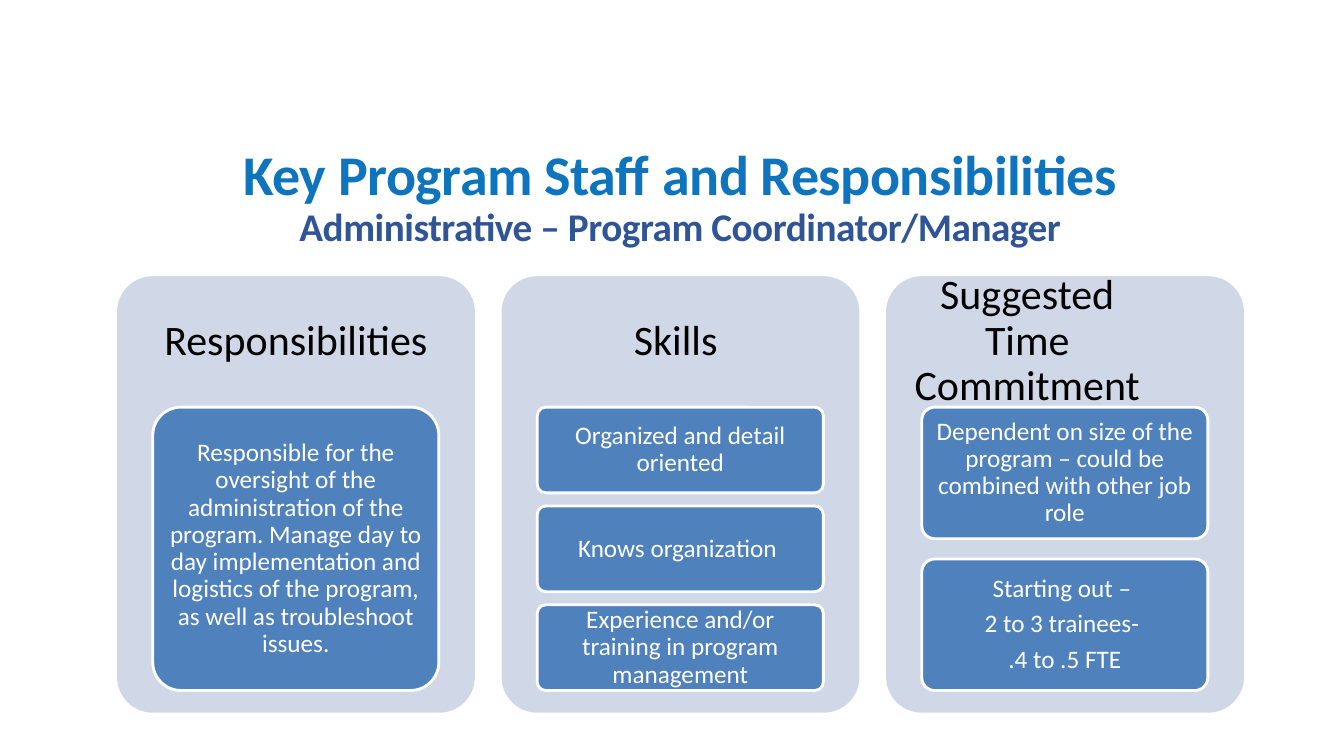
"""Build the slide on the program coordinator's responsibilities, skills and time."""
from dataclasses import dataclass

from pptx import Presentation
from pptx.dml.color import RGBColor
from pptx.enum.shapes import MSO_SHAPE
from pptx.enum.text import MSO_ANCHOR, PP_ALIGN
from pptx.shapes.autoshape import Shape
from pptx.slide import Slide
from pptx.text.text import TextFrame, _Paragraph
from pptx.util import Cm, Length, Pt

FONT = "Calibri"
PANEL_LEFT, PANEL_TOP, PANEL_PITCH = 2.95, 6.96, 9.69
PANEL_WIDTH, PANEL_HEIGHT = 9.02, 11.0
HEADING_INDENT, HEADING_HEIGHT = 0.1, 3.1
CARD_INDENT, CARD_WIDTH = 0.9, 7.21
CARDS_TOP, CARDS_HEIGHT = 10.26, 7.14
GAP_RATIO = 2 / 13


@dataclass(frozen=True)
class Panel:
    heading: list[str]
    cards: list[list[str]]
    first_line_right_margin: float = 0


PANELS = [
    Panel(["Responsibilities"], [[
        "Responsible for the oversight of the administration of the program. "
        "Manage day to day implementation and logistics of the program, "
        "as well as troubleshoot issues."]]),
    Panel(["Skills "], [
        ["Organized and detail oriented"],
        ["Knows organization "],
        ["Experience and/or training in program management"]]),
    Panel(["Suggested", "Time Commitment"], [
        ["Dependent on size of the program – could be combined with other job role"],
        ["Starting out – ", "2 to 3 trainees- ", ".4 to .5 FTE"]],
        first_line_right_margin=1.9),
]


def color(hex_code: str) -> RGBColor:
    return RGBColor.from_string(hex_code)


def style(paragraph: _Paragraph) -> None:
    paragraph.alignment = PP_ALIGN.CENTER
    paragraph.line_spacing = 0.9
    paragraph.font.name = FONT


def write(frame: TextFrame, lines: list[str], size: int, hex_code: str,
          side: float, edge: float, gap: Length) -> None:
    frame.word_wrap = True
    frame.vertical_anchor = MSO_ANCHOR.MIDDLE
    frame.margin_left = frame.margin_right = Cm(side)
    frame.margin_top = frame.margin_bottom = Cm(edge)
    for index, line in enumerate(lines):
        paragraph = frame.add_paragraph() if index else frame.paragraphs[0]
        paragraph.text = line
        style(paragraph)
        paragraph.font.size = Pt(size)
        paragraph.font.color.rgb = color(hex_code)
        if index:
            paragraph.space_before = gap


def add_rounded(slide: Slide, left: float, top: float, width: float,
                height: float, fill: str) -> Shape:
    rounded = slide.shapes.add_shape(
        MSO_SHAPE.ROUNDED_RECTANGLE, Cm(left), Cm(top), Cm(width), Cm(height))
    rounded.adjustments[0] = 0.1
    rounded.shadow.inherit = False
    rounded.fill.solid()
    rounded.fill.fore_color.rgb = color(fill)
    rounded.line.fill.background()
    return rounded


def add_panel(slide: Slide, panel: Panel, left: float) -> None:
    add_rounded(slide, left, PANEL_TOP, PANEL_WIDTH, PANEL_HEIGHT, "D0D8E8")
    heading = slide.shapes.add_textbox(
        Cm(left + HEADING_INDENT), Cm(PANEL_TOP + HEADING_INDENT),
        Cm(PANEL_WIDTH - 2 * HEADING_INDENT), Cm(HEADING_HEIGHT)).text_frame
    write(heading, panel.heading, 30, "000000", 0.3, 0.3, Pt(0))
    if panel.first_line_right_margin:
        first_line = heading.paragraphs[0]._p.get_or_add_pPr()
        first_line.set("marR", str(Cm(panel.first_line_right_margin)))

    count = len(panel.cards)
    height = CARDS_HEIGHT / (count + (count - 1) * GAP_RATIO)
    for row, lines in enumerate(panel.cards):
        top = CARDS_TOP + row * height * (1 + GAP_RATIO)
        card = add_rounded(slide, left + CARD_INDENT, top, CARD_WIDTH, height, "4F81BD")
        card.line.color.rgb = color("FFFFFF")
        card.line.width = Pt(2)
        write(card.text_frame, lines, 18, "FFFFFF", 0.13, 0.1, Pt(6))


def add_title(slide: Slide) -> None:
    frame = slide.shapes.add_textbox(Cm(1.9), Cm(3.58), Cm(30.48), Cm(2)).text_frame
    frame.word_wrap = True
    title = frame.paragraphs[0]
    style(title)
    title.font.bold = True
    for text, size, hex_code in [
            ("Key Program Staff and Responsibilities", 40, "0E74BD"),
            ("Administrative – Program Coordinator/Manager", 28, "2F5597")]:
        if title.runs:
            title.add_line_break()
        run = title.add_run()
        run.text = text
        run.font.size = Pt(size)
        run.font.color.rgb = color(hex_code)
        run._r.get_or_add_rPr().set("spc", "-30")


def main() -> None:
    presentation = Presentation()
    presentation.slide_width, presentation.slide_height = Cm(33.87), Cm(19.05)
    slide = presentation.slides.add_slide(presentation.slide_layouts[6])
    add_title(slide)
    for column, panel in enumerate(PANELS):
        add_panel(slide, panel, PANEL_LEFT + column * PANEL_PITCH)
    presentation.save("out.pptx")


if __name__ == "__main__":
    main()
